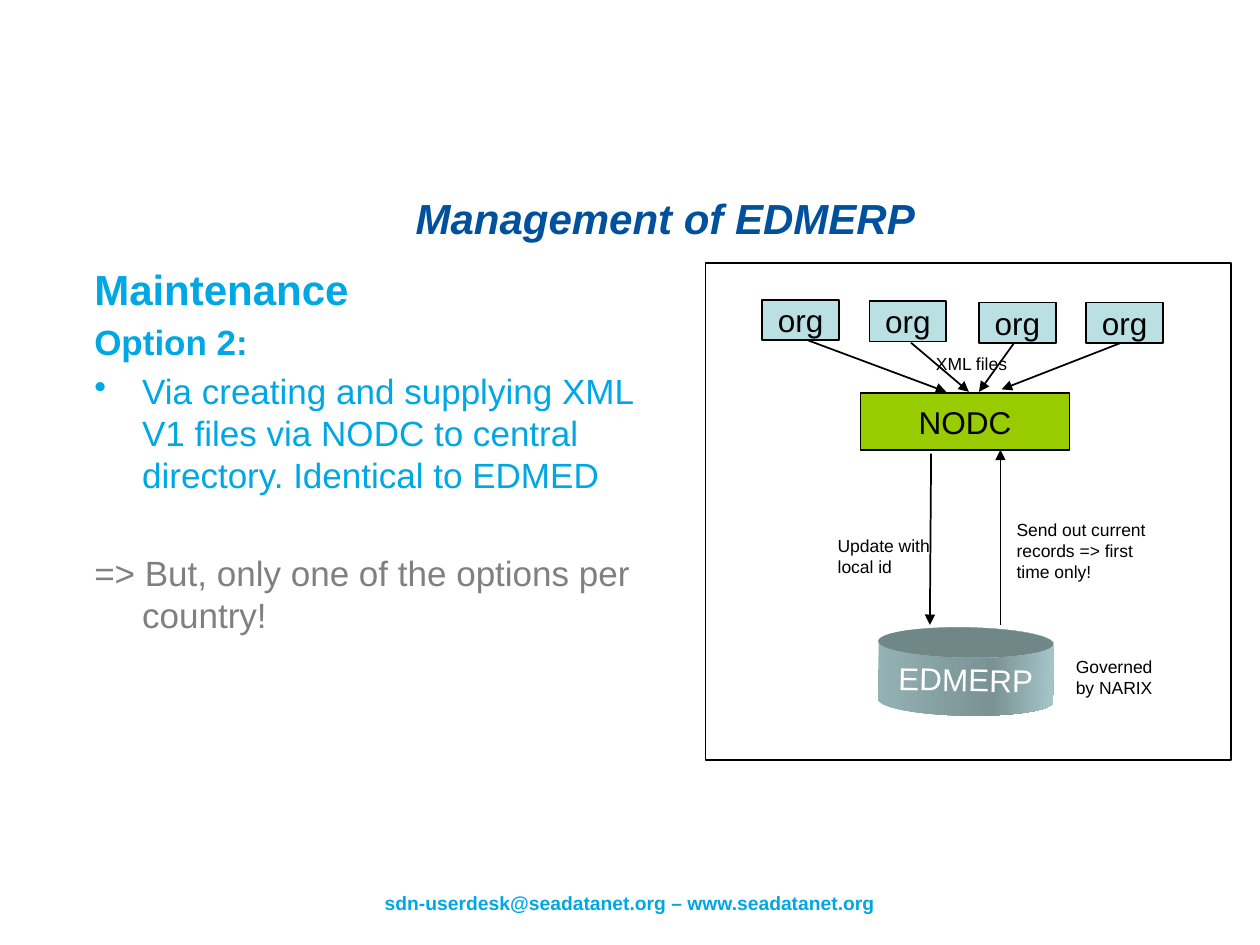
"""Build the slide on managing EDMERP, with its data flow diagram."""
from copy import deepcopy

from pptx import Presentation
from pptx.dml.color import RGBColor
from pptx.enum.shapes import MSO_CONNECTOR, MSO_SHAPE
from pptx.enum.text import MSO_ANCHOR, PP_ALIGN
from pptx.oxml.ns import qn
from pptx.util import Inches, Pt
from lxml.etree import SubElement

CYAN = RGBColor(0x00, 0xA7, 0xE5)
NAVY = RGBColor(0x00, 0x51, 0x9D)
GRAY = RGBColor(0x80, 0x80, 0x80)
BLACK = RGBColor(0, 0, 0)
WHITE = RGBColor(0xFF, 0xFF, 0xFF)
PALE = RGBColor(0xBB, 0xE0, 0xE3)
GREEN = RGBColor(0x99, 0xCC, 0x00)
LID = RGBColor(0x6F, 0x87, 0x87)
DRUM = [(0, RGBColor(0x94, 0xB2, 0xB4)), (0.65, RGBColor(0x7A, 0x92, 0x93)),
        (1, RGBColor(0xA6, 0xC7, 0xCA))]

TITLE = "Management of EDMERP"
FOOTER = "sdn-userdesk@seadatanet.org – www.seadatanet.org"
BODY = [
    ("Maintenance", dict(size=24, bold=True)),
    ("Option 2:", dict(size=20, bold=True, before=4)),
    ("Via creating and supplying XML V1 files via NODC to central directory. "
     "Identical to EDMED", dict(size=20, before=4, bullet="•")),
    ("=> But, only one of the options per country!",
     dict(size=20, before=32, color=GRAY)),
]
ORGS = [(6.05, 2.38), (6.9, 2.39), (7.77, 2.4), (8.62, 2.4)]
ARROWS = [
    (6.41, 2.7, 7.51, 3.11), (7.23, 2.72, 7.69, 3.11),
    (8.05, 2.72, 7.77, 3.11), (8.9, 2.72, 7.95, 3.09),
    (7.39, 3.6, 7.38, 4.96), (7.94, 4.96, 7.94, 3.57),
]
LABELS = [
    ("XML files", (7.33, 2.75, 1.34, 0.27)),
    ("Update with local id", (6.55, 4.2, 0.94, 0.43)),
    ("Send out current records => first time only!", (7.97, 4.07, 1.34, 0.6)),
    ("Governed by NARIX", (8.44, 5.16, 0.94, 0.43)),
]


def write(para, text, size=18, color=BLACK, bold=False, italic=False,
          align=PP_ALIGN.LEFT, before=0, hanging=0, bullet=None):
    props = para._p.get_or_add_pPr()
    if hanging:
        props.set("marL", str(Inches(hanging)))
        props.set("indent", str(-Inches(hanging)))
    if bullet:
        SubElement(props, qn("a:buChar"), char=bullet)
    para.alignment = align
    para.space_before = Pt(before)
    span = para.add_run()
    span.text = text
    font = span.font
    font.name, font.size, font.bold, font.italic = "Arial", Pt(size), bold, italic
    font.color.rgb = color


def clear_margins(frame):
    frame.margin_left = frame.margin_right = 0
    frame.margin_top = frame.margin_bottom = 0


def add_text(page, at):
    frame = page.shapes.add_textbox(*map(Inches, at)).text_frame
    frame.word_wrap = True
    return frame


def add_block(page, at, kind=MSO_SHAPE.RECTANGLE, fill=None, line=BLACK,
              text=None, color=BLACK):
    block = page.shapes.add_shape(kind, *map(Inches, at))
    block.shadow.inherit = False
    if fill is None:
        block.fill.background()
    else:
        block.fill.solid()
        block.fill.fore_color.rgb = fill
    if line is None:
        block.line.fill.background()
    else:
        block.line.color.rgb = line
        block.line.width = Pt(1)
    if text:
        frame = block.text_frame
        frame.word_wrap = False
        frame.vertical_anchor = MSO_ANCHOR.MIDDLE
        write(frame.paragraphs[0], text, color=color, align=PP_ALIGN.CENTER)
    return block


def add_arrow(page, ends):
    arrow = page.shapes.add_connector(MSO_CONNECTOR.STRAIGHT, *map(Inches, ends))
    arrow.line.color.rgb = BLACK
    arrow.line.width = Pt(1)
    SubElement(arrow.line._get_or_add_ln(), qn("a:tailEnd"), type="triangle")
    SubElement(arrow._element.spPr, qn("a:effectLst"))


def add_database(page):
    drum = add_block(page, (6.97, 4.98, 1.39, 0.7), MSO_SHAPE.CAN, PALE, None,
                     "EDMERP", WHITE)
    drum.adjustments[0] = 0.34
    drum.rotation = 1
    drum.fill.gradient()
    drum.fill.gradient_angle = 0
    stops = drum._element.spPr.find(".//" + qn("a:gsLst"))
    stops.append(deepcopy(stops[-1]))
    for stop, (position, color) in zip(drum.fill.gradient_stops, DRUM):
        stop.position = position
        stop.color.rgb = color
    lid = add_block(page, (6.97, 4.98, 1.39, 0.24), MSO_SHAPE.OVAL, LID, None)
    lid.rotation = 1


def main():
    deck = Presentation()
    deck.slide_width, deck.slide_height = Inches(10), Inches(7.5)
    page = deck.slides.add_slide(deck.slide_layouts[5])

    title = page.shapes.title
    title.left, title.top = Inches(0.75), Inches(1.46)
    title.width, title.height = Inches(9.06), Inches(0.54)
    clear_margins(title.text_frame)
    title.text_frame.vertical_anchor = MSO_ANCHOR.MIDDLE
    write(title.text_frame.paragraphs[0], TITLE, size=24, color=NAVY,
          bold=True, italic=True, align=PP_ALIGN.CENTER)

    footer = add_text(page, (0, 7.07, 10, 0.18))
    clear_margins(footer)
    write(footer.paragraphs[0], FOOTER, size=11, color=CYAN, bold=True,
          align=PP_ALIGN.CENTER)

    body = add_text(page, (0.65, 2.04, 4.54, 3.51))
    for index, (text, style) in enumerate(BODY):
        para = body.add_paragraph() if index else body.paragraphs[0]
        write(para, text, **{"color": CYAN, "hanging": 0.38, **style})

    add_block(page, (5.6, 2.09, 4.17, 3.94))
    for left, top in ORGS:
        add_block(page, (left, top, 0.61, 0.32), fill=PALE, text="org")
    add_block(page, (6.83, 3.12, 1.66, 0.45), fill=GREEN, text="NODC")
    add_database(page)
    for ends in ARROWS:
        add_arrow(page, ends)
    for text, at in LABELS:
        write(add_text(page, at).paragraphs[0], text, size=10)

    deck.save("out.pptx")


if __name__ == "__main__":
    main()
